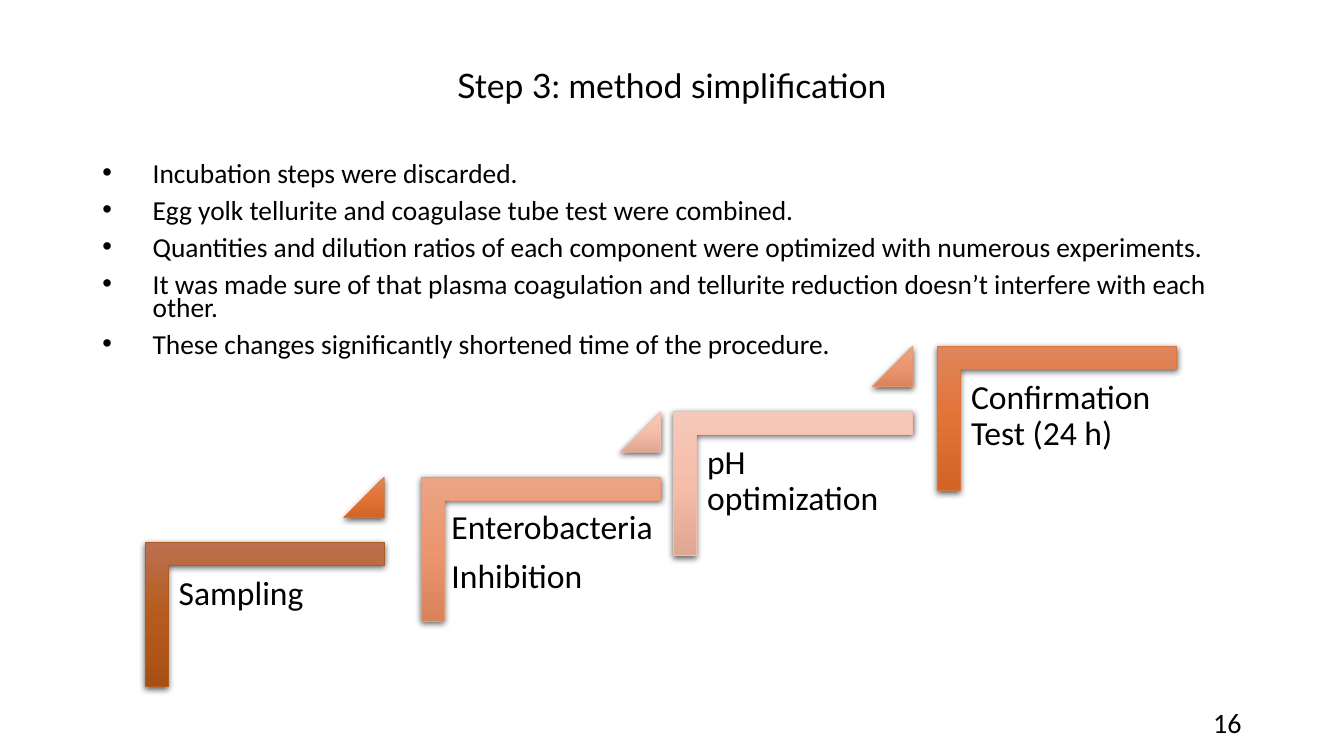
from lxml import etree
from pptx import Presentation
from pptx.dml.color import RGBColor
from pptx.enum.shapes import MSO_SHAPE
from pptx.enum.text import MSO_ANCHOR, PP_ALIGN
from pptx.oxml import parse_xml
from pptx.oxml.ns import nsdecls, qn
from pptx.util import Pt

CORNER, TRIANGLE = MSO_SHAPE.CORNER, MSO_SHAPE.ISOSCELES_TRIANGLE
TOP, MIDDLE = MSO_ANCHOR.TOP, MSO_ANCHOR.MIDDLE
LEFT, CENTER, RIGHT = PP_ALIGN.LEFT, PP_ALIGN.CENTER, PP_ALIGN.RIGHT

TITLE = "Step 3: method simplification"
BULLETS = [
    "Incubation steps were discarded.",
    "Egg yolk tellurite and coagulase tube test were combined.",
    "Quantities and dilution ratios of each component were optimized with numerous experiments.",
    "It was made sure of that plasma coagulation and tellurite reduction doesn’t interfere with each other.",
    "These changes significantly shortened time of the procedure.",
]
PAGE_NUMBER = "16"

# paragraphs, left edge, text offset, text width, corner colour, triangle colour
STEPS = [
    (["Sampling"], 103.5, 17, 154, "brown", "orange"),
    (["Enterobacteria", "Inhibition"], 301, 14.4, 206, "salmon", "pink"),
    (["pH optimization"], 481, 17, 154, "pink", "salmon"),
    (["Confirmation Test (24 h)"], 669.5, 17, 154, "orange", None),
]
COLORS = {
    "text": "000000",
    "brown": ("BB7150", "B65B1D", "A85014", "AF5C24"),
    "orange": ("DF865D", "E27336", "D26427", "DA753D"),
    "salmon": ("EBA486", "EC966F", "D9835C", "E79875"),
    "pink": ("F5C9B9", "F5BEAA", "DFA692", "F2BFAD"),
}

FIRST_TOP, RISE = 387.5, 46.75
STEP_W, STEP_H = 171, 103
TRIANGLE_SIZE = 29
BAR = 0.161
TEXT_DROP, TEXT_H = 17, 135


def add_text(slide, box, paragraphs, size, font="Calibri", align=LEFT, anchor=TOP,
             spacing=None, before=0, after=0, inset=3.6, bullet=False):
    tf = slide.shapes.add_textbox(*map(Pt, box)).text_frame
    tf.word_wrap = True
    tf.vertical_anchor = anchor
    tf.margin_top = tf.margin_bottom = Pt(inset)
    for i, text in enumerate(paragraphs):
        p = tf.paragraphs[0] if i == 0 else tf.add_paragraph()
        p.alignment = align
        p.line_spacing = spacing
        p.space_before, p.space_after = Pt(before), Pt(after)
        if bullet:
            pPr = p._p.get_or_add_pPr()
            pPr.set("marL", str(Pt(36)))
            pPr.set("indent", str(Pt(-36)))
            etree.SubElement(pPr, qn("a:buFont")).set("typeface", "Arial")
            etree.SubElement(pPr, qn("a:buChar")).set("char", "•")
        r = p.add_run()
        r.text = text
        r.font.name, r.font.size = font, Pt(size)
        r.font.color.rgb = RGBColor.from_string(COLORS["text"])


def add_shaded(slide, kind, box, adjustments, color, rotation=0):
    """Add a shape with a vertical three-stop gradient and a soft shadow."""
    *stops, outline = COLORS[color]
    s = slide.shapes.add_shape(kind, *map(Pt, box))
    s.rotation = rotation
    for i, value in enumerate(adjustments):
        s.adjustments[i] = value
    s.line.color.rgb = RGBColor.from_string(outline)
    s.line.width = Pt(0.5)
    s.fill.background()
    gs = "".join(f'<a:gs pos="{i * 50000}"><a:srgbClr val="{c}"/></a:gs>'
                 for i, c in enumerate(stops))
    spPr = s._element.spPr
    spPr.replace(spPr.find(qn("a:noFill")), parse_xml(
        f'<a:gradFill {nsdecls("a")} rotWithShape="0"><a:gsLst>{gs}</a:gsLst>'
        '<a:lin ang="5400000" scaled="0"/></a:gradFill>'))
    s.shadow.inherit = False
    spPr.find(qn("a:effectLst")).append(parse_xml(
        f'<a:outerShdw {nsdecls("a")} blurRad="{Pt(4.5)}" dist="{Pt(1.5)}" dir="5400000" '
        'algn="ctr" rotWithShape="0"><a:srgbClr val="000000"><a:alpha val="63000"/>'
        '</a:srgbClr></a:outerShdw>'))


def main():
    prs = Presentation()
    prs.slide_width, prs.slide_height = Pt(960), Pt(540)
    slide = prs.slides.add_slide(prs.slide_layouts[6])

    add_text(slide, (66, 10, 828, 104.5), [TITLE], 24, "Lato", CENTER, MIDDLE, spacing=0.9)
    add_text(slide, (66, 114.5, 828, 173.5), BULLETS, 19.6, spacing=0.7, before=10, bullet=True)
    add_text(slide, (678, 500.5, 216, 29), [PAGE_NUMBER], 20, align=RIGHT)

    for i, (label, left, offset, text_w, color, next_color) in enumerate(STEPS):
        top = FIRST_TOP - i * RISE
        shift = (STEP_W - STEP_H) / 2  # the corner is turned by 90° about its centre
        add_shaded(slide, CORNER, (left + shift, top - shift, STEP_H, STEP_W),
                   (BAR, BAR), color, rotation=90)
        add_text(slide, (left + offset, top + TEXT_DROP, text_w, TEXT_H), label, 24,
                 spacing=0.9, after=8.4, inset=7.2)
        if next_color:
            add_shaded(slide, TRIANGLE, (left + STEP_W - TRIANGLE_SIZE, top - RISE,
                                         TRIANGLE_SIZE, TRIANGLE_SIZE), (1,), next_color)

    prs.save("out.pptx")


if __name__ == "__main__":
    main()
